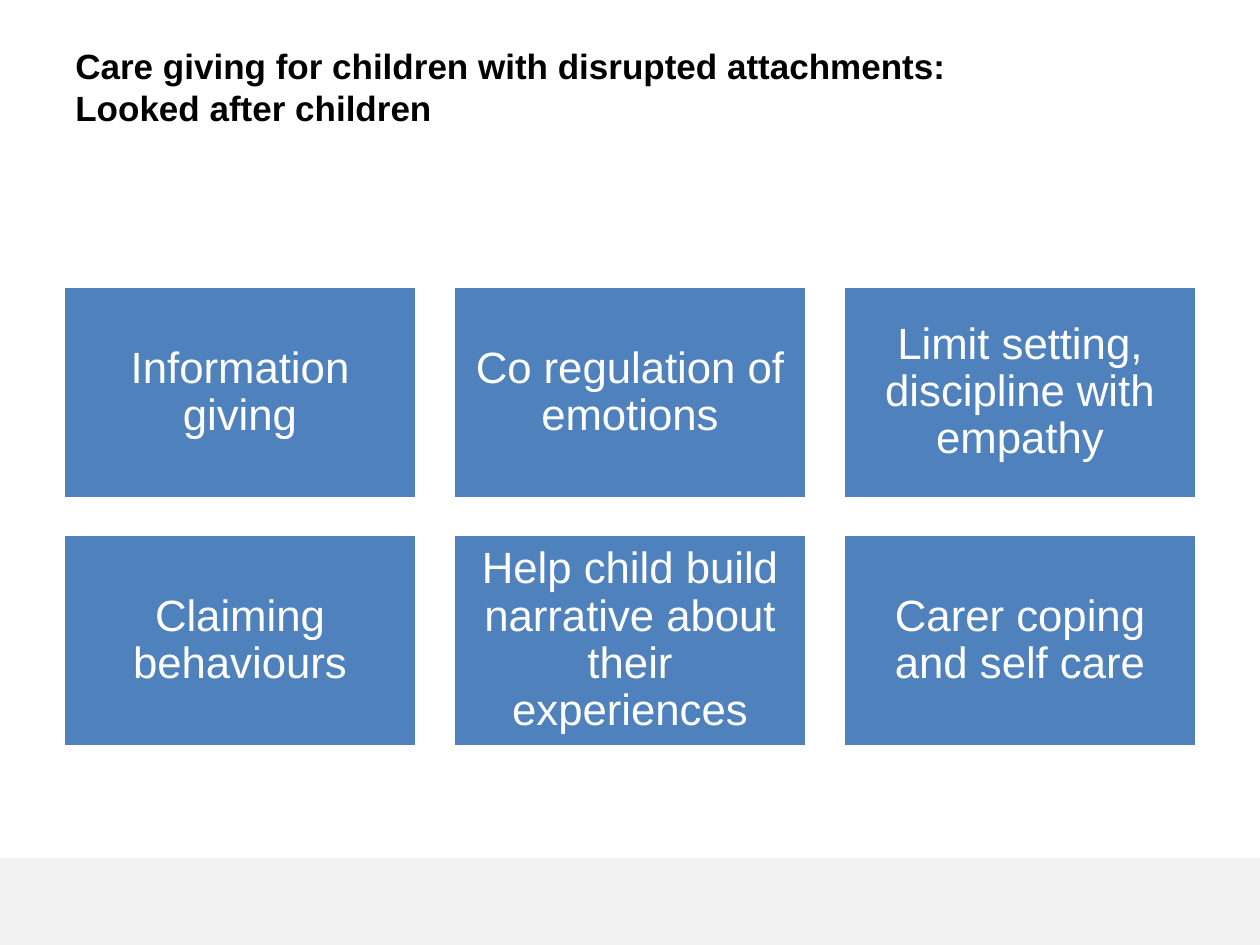
from dataclasses import dataclass

from pptx import Presentation
from pptx.dml.color import RGBColor
from pptx.enum.shapes import MSO_SHAPE as Shape
from pptx.enum.text import MSO_ANCHOR as Anchor, PP_ALIGN as Align
from pptx.util import Emu, Pt

PX_PER_INCH = 126


@dataclass(frozen=True)
class Theme:
    font: str = "Arial"
    title_size: Pt = Pt(20)
    card_size: Pt = Pt(25)
    ink: RGBColor = RGBColor(0, 0, 0)
    white: RGBColor = RGBColor(255, 255, 255)
    card: RGBColor = RGBColor(0x4F, 0x81, 0xBD)
    footer: RGBColor = RGBColor(0xF2, 0xF2, 0xF2)


@dataclass(frozen=True)
class Box:
    left: int
    top: int
    width: int
    height: int

    def emu(self) -> tuple[Emu, ...]:
        return tuple(px(v) for v in (self.left, self.top, self.width, self.height))


@dataclass(frozen=True)
class Card:
    text: str
    box: Box


THEME = Theme()
SLIDE = Box(0, 0, 1260, 945)
FOOTER = Box(0, 858, 1260, 87)
TITLE = Box(63, 38, 1134, 158)
TITLE_LINES = (
    "Care giving for children with disrupted attachments:",
    "Looked after children",
)
FIRST_CARD = Box(63, 286, 354, 213)
COLUMNS = 3
COLUMN_STEP = 390
ROW_STEP = 248
CARD_MARGIN = 12
CARD_TEXTS = (
    "Information giving",
    "Co regulation of emotions",
    "Limit setting, discipline with empathy",
    "Claiming behaviours",
    "Help child build narrative about their experiences",
    "Carer coping and self care",
)


def px(length: int) -> Emu:
    return Emu(round(length * 914400 / PX_PER_INCH))


def card_grid() -> list[Card]:
    """Place the card texts row by row."""
    cards = []
    for index, text in enumerate(CARD_TEXTS):
        row, column = divmod(index, COLUMNS)
        box = Box(
            FIRST_CARD.left + column * COLUMN_STEP,
            FIRST_CARD.top + row * ROW_STEP,
            FIRST_CARD.width,
            FIRST_CARD.height,
        )
        cards.append(Card(text, box))
    return cards


def add_rectangle(slide, box: Box, fill: RGBColor):
    shape = slide.shapes.add_shape(Shape.RECTANGLE, *box.emu())
    shape.shadow.inherit = False
    shape.fill.solid()
    shape.fill.fore_color.rgb = fill
    shape.line.fill.background()
    return shape


def style_font(paragraph, size: Pt, color: RGBColor, bold: bool = False) -> None:
    font = paragraph.font
    font.name = THEME.font
    font.size = size
    font.bold = bold
    font.color.rgb = color


def add_card(slide, card: Card) -> None:
    shape = add_rectangle(slide, card.box, THEME.card)
    shape.line.color.rgb = THEME.white
    shape.line.width = Pt(2)
    frame = shape.text_frame
    frame.word_wrap = True
    frame.vertical_anchor = Anchor.MIDDLE
    frame.margin_left = frame.margin_right = px(CARD_MARGIN)
    frame.margin_top = frame.margin_bottom = px(CARD_MARGIN)
    paragraph = frame.paragraphs[0]
    paragraph.text = card.text
    paragraph.alignment = Align.CENTER
    paragraph.line_spacing = 0.9
    style_font(paragraph, THEME.card_size, THEME.white)


def add_title(slide) -> None:
    frame = slide.shapes.add_textbox(*TITLE.emu()).text_frame
    frame.word_wrap = True
    frame.vertical_anchor = Anchor.TOP
    paragraph = frame.paragraphs[0]
    paragraph.text = "\v".join(TITLE_LINES)
    paragraph.line_spacing = Pt(24)
    style_font(paragraph, THEME.title_size, THEME.ink, bold=True)


def main() -> None:
    presentation = Presentation()
    presentation.slide_width = px(SLIDE.width)
    presentation.slide_height = px(SLIDE.height)
    slide = presentation.slides.add_slide(presentation.slide_layouts[6])
    add_rectangle(slide, FOOTER, THEME.footer)
    for card in card_grid():
        add_card(slide, card)
    add_title(slide)
    presentation.save("out.pptx")


if __name__ == "__main__":
    main()
